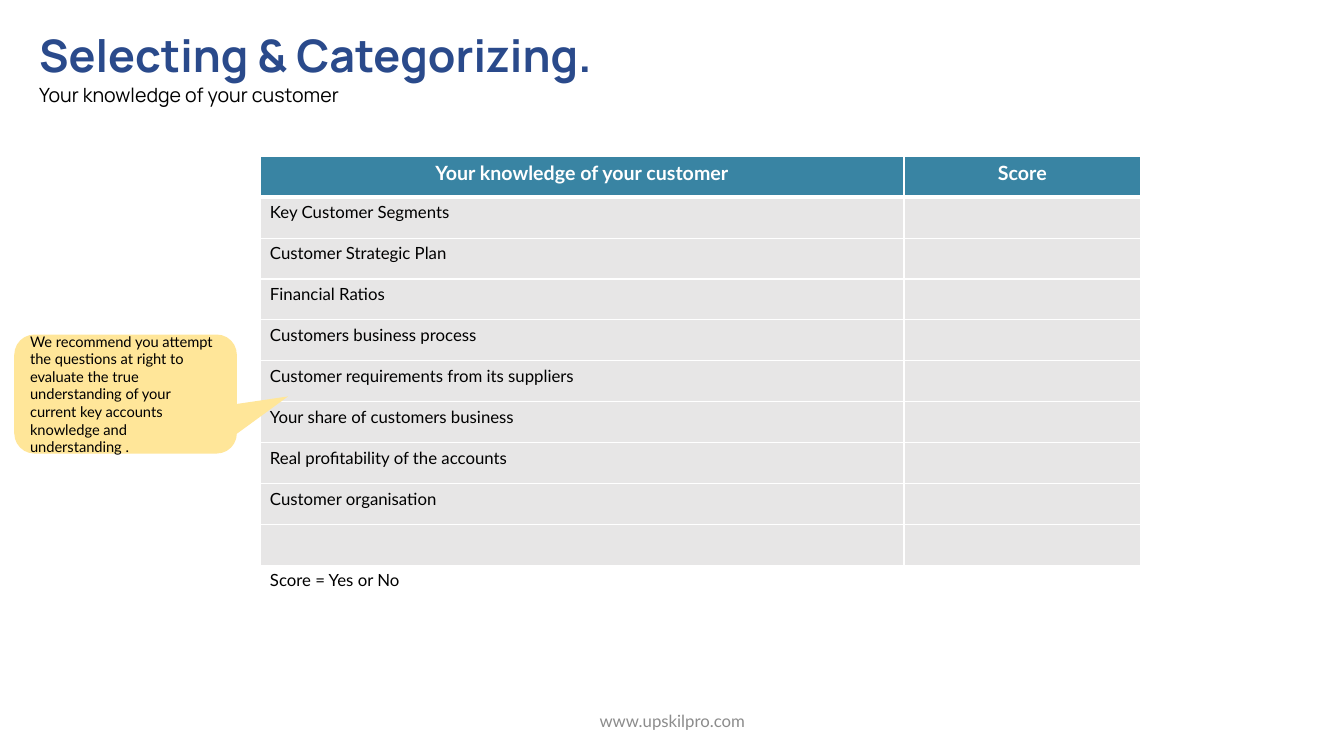
"""Build the customer knowledge scoring slide."""
from dataclasses import dataclass

from lxml.etree import SubElement
from pptx import Presentation
from pptx.dml.color import RGBColor
from pptx.enum.shapes import MSO_SHAPE
from pptx.enum.text import MSO_ANCHOR, PP_ALIGN
from pptx.oxml.ns import qn
from pptx.slide import Slide
from pptx.table import _Cell
from pptx.text.text import TextFrame, _Paragraph
from pptx.util import Cm, Pt

WHITE = RGBColor(0xFF, 0xFF, 0xFF)
BLACK = RGBColor(0, 0, 0)
TEAL = RGBColor(0x39, 0x84, 0xA3)
LIGHT_GREY = RGBColor(0xE7, 0xE6, 0xE6)
FOOTER_GREY = RGBColor(0x8C, 0x8C, 0x8C)
NAVY = RGBColor(0x2A, 0x4A, 0x8B)
YELLOW = RGBColor(0xFF, 0xE6, 0x99)

HEADINGS = ("Your knowledge of your customer", "Score")
TOPICS = (
    "Key Customer Segments",
    "Customer Strategic Plan",
    "Financial Ratios",
    "Customers business process",
    "Customer requirements from its suppliers",
    "Your share of customers business",
    "Real profitability of the accounts",
    "Customer organisation",
    "",
)
SCORE_KEY = "Score = Yes or No"
ADVICE = (
    "We recommend you attempt the questions at right to evaluate the true "
    "understanding of your current key accounts knowledge and understanding ."
)
COLUMN_WIDTHS = (Cm(16.23), Cm(5.97))
ROW_HEIGHT = Cm(1.03)


@dataclass(frozen=True)
class TextStyle:
    size: float
    color: RGBColor
    font: str = "Lato"
    bold: bool = False
    alignment: PP_ALIGN = PP_ALIGN.LEFT


@dataclass(frozen=True)
class TableRow:
    texts: tuple[str, str]
    fill: RGBColor
    style: TextStyle
    top_border: int = 1
    bottom_border: int = 1


TITLE = TextStyle(32, NAVY, "Manrope", True)
SUBTITLE = TextStyle(14, BLACK, "Manrope")
HEADER = TextStyle(14, WHITE, bold=True, alignment=PP_ALIGN.CENTER)
BODY = TextStyle(12, BLACK)
CALLOUT = TextStyle(10.5, BLACK)
FOOTER = TextStyle(12, FOOTER_GREY, alignment=PP_ALIGN.CENTER)


def write(paragraph: _Paragraph, text: str, style: TextStyle) -> None:
    paragraph.text = text
    paragraph.alignment = style.alignment
    paragraph.font.name = style.font
    paragraph.font.size = Pt(style.size)
    paragraph.font.bold = style.bold
    paragraph.font.color.rgb = style.color


def add_text_box(slide: Slide, left: Cm, top: Cm, width: Cm, height: Cm) -> TextFrame:
    frame = slide.shapes.add_textbox(left, top, width, height).text_frame
    frame.word_wrap = True
    return frame


def draw_borders(cell: _Cell, top: int, bottom: int) -> None:
    properties = cell._tc.get_or_add_tcPr()
    for side, points in (("L", 1), ("R", 1), ("T", top), ("B", bottom)):
        line = SubElement(properties, qn(f"a:ln{side}"), w=str(Pt(points)))
        fill = SubElement(line, qn("a:solidFill"))
        SubElement(fill, qn("a:srgbClr"), val=str(WHITE))


def add_score_table(slide: Slide) -> None:
    rows = [TableRow(HEADINGS, TEAL, HEADER, bottom_border=3)]
    rows += [
        TableRow((topic, ""), LIGHT_GREY, BODY, top_border=3 if index == 0 else 1)
        for index, topic in enumerate(TOPICS)
    ]
    rows.append(TableRow((SCORE_KEY, ""), WHITE, BODY))
    table = slide.shapes.add_table(
        len(rows), len(COLUMN_WIDTHS), Cm(6.55), Cm(3.94),
        sum(COLUMN_WIDTHS), ROW_HEIGHT * len(rows),
    ).table
    table.horz_banding = False
    for column, width in zip(table.columns, COLUMN_WIDTHS):
        column.width = width
    for table_row, row in zip(table.rows, rows):
        table_row.height = ROW_HEIGHT
        for cell, text in zip(table_row.cells, row.texts):
            draw_borders(cell, row.top_border, row.bottom_border)
            cell.fill.solid()
            cell.fill.fore_color.rgb = row.fill
            write(cell.text_frame.paragraphs[0], text, row.style)


def add_heading(slide: Slide) -> None:
    frame = add_text_box(slide, Cm(0.74), Cm(0.58), Cm(23.67), Cm(2.24))
    write(frame.paragraphs[0], "Selecting & Categorizing.", TITLE)
    subtitle = frame.add_paragraph()
    write(subtitle, "Your knowledge of your customer", SUBTITLE)
    subtitle.line_spacing = 1.07
    subtitle.space_after = Pt(8)


def add_footer(slide: Slide) -> None:
    frame = add_text_box(slide, Cm(11.23), Cm(17.65), Cm(11.43), Cm(1.02))
    frame.vertical_anchor = MSO_ANCHOR.MIDDLE
    write(frame.paragraphs[0], "www.upskilpro.com", FOOTER)


def add_advice_callout(slide: Slide) -> None:
    shape = slide.shapes.add_shape(
        MSO_SHAPE.ROUNDED_RECTANGULAR_CALLOUT, Cm(0.36), Cm(8.43), Cm(5.61), Cm(3)
    )
    for index, value in enumerate((0.73, 0.02, 0.17)):
        shape.adjustments[index] = value
    shape.shadow.inherit = False
    shape.fill.solid()
    shape.fill.fore_color.rgb = YELLOW
    shape.line.fill.background()
    shape.text_frame.word_wrap = True
    shape.text_frame.vertical_anchor = MSO_ANCHOR.MIDDLE
    write(shape.text_frame.paragraphs[0], ADVICE, CALLOUT)


def main() -> None:
    presentation = Presentation()
    presentation.slide_width = Cm(33.87)
    presentation.slide_height = Cm(19.05)
    slide = presentation.slides.add_slide(presentation.slide_layouts[6])
    add_score_table(slide)
    add_heading(slide)
    add_footer(slide)
    add_advice_callout(slide)
    presentation.save("out.pptx")


if __name__ == "__main__":
    main()
